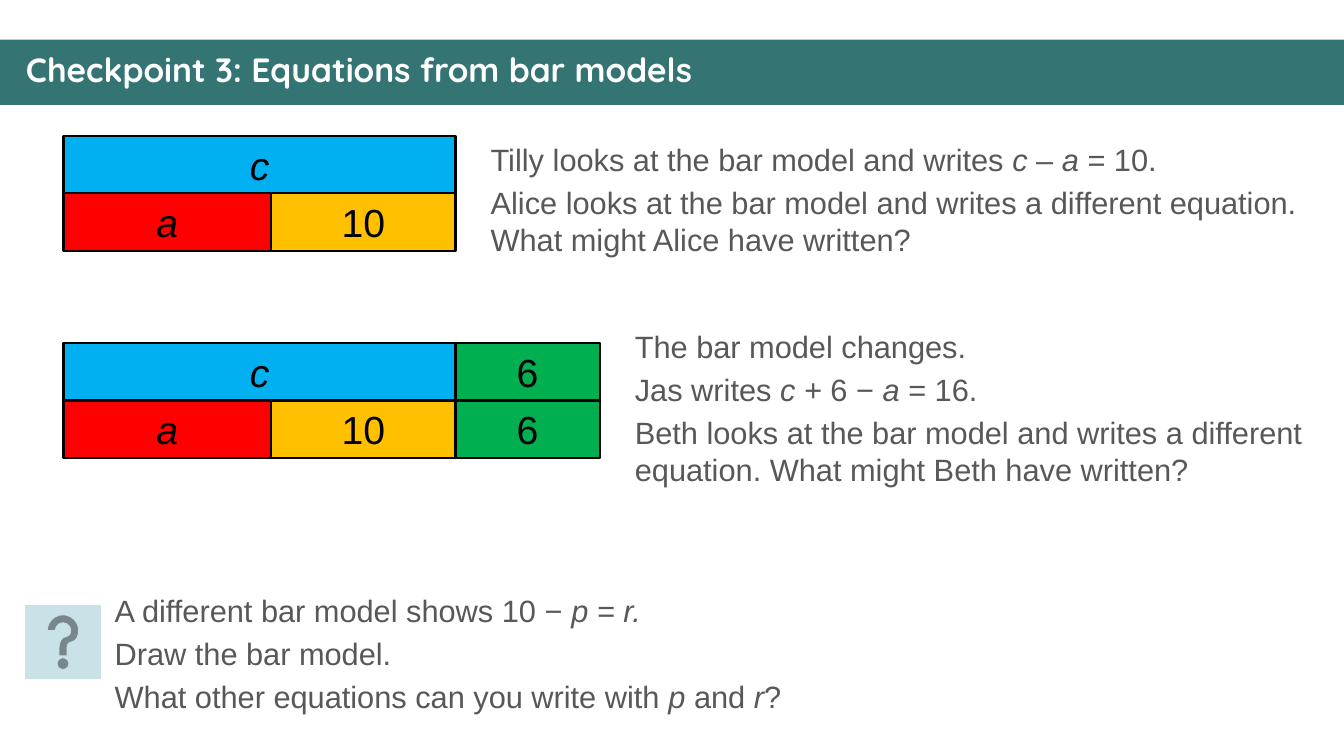
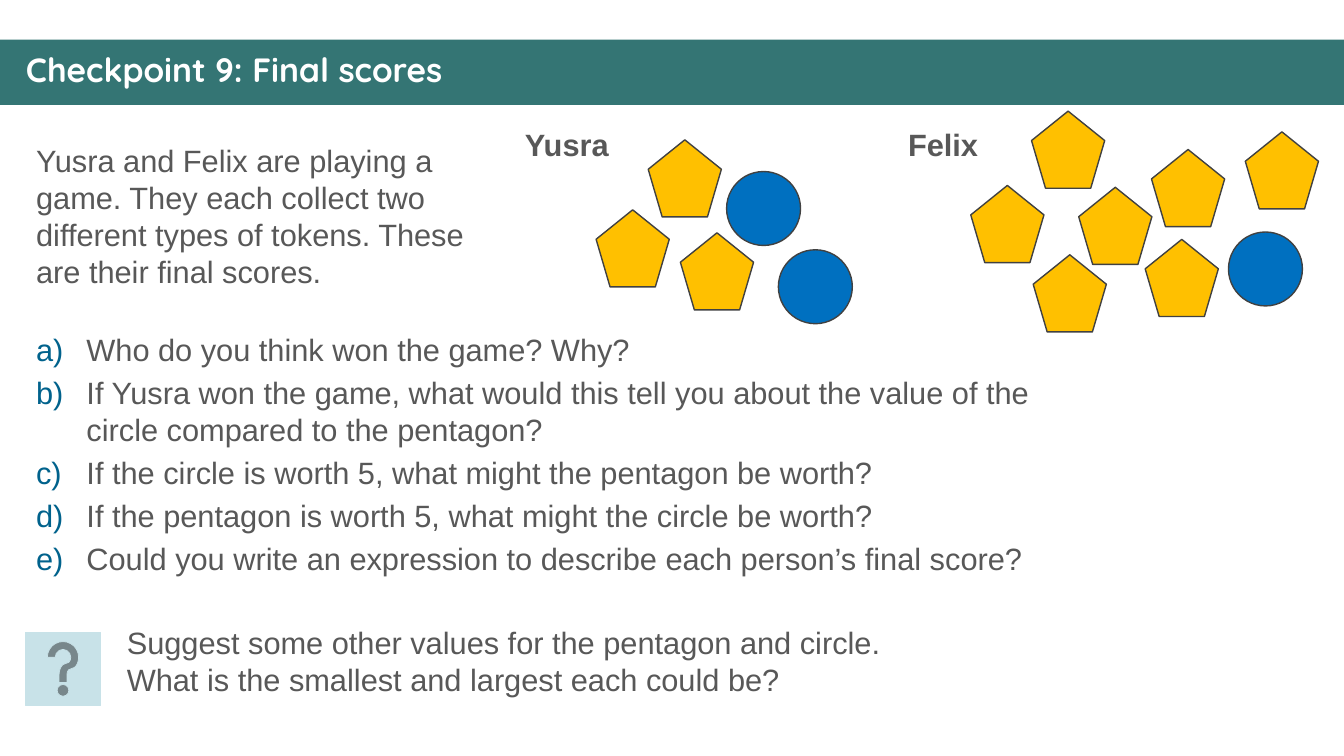
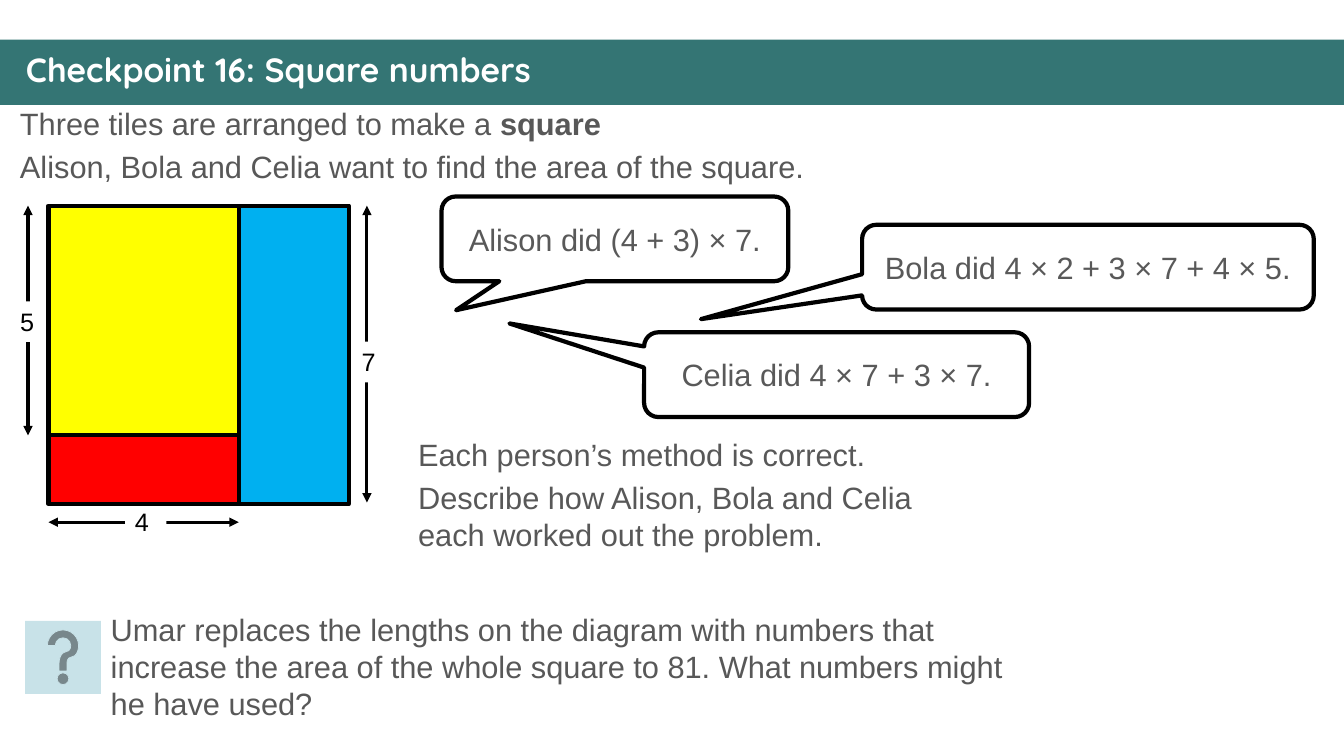
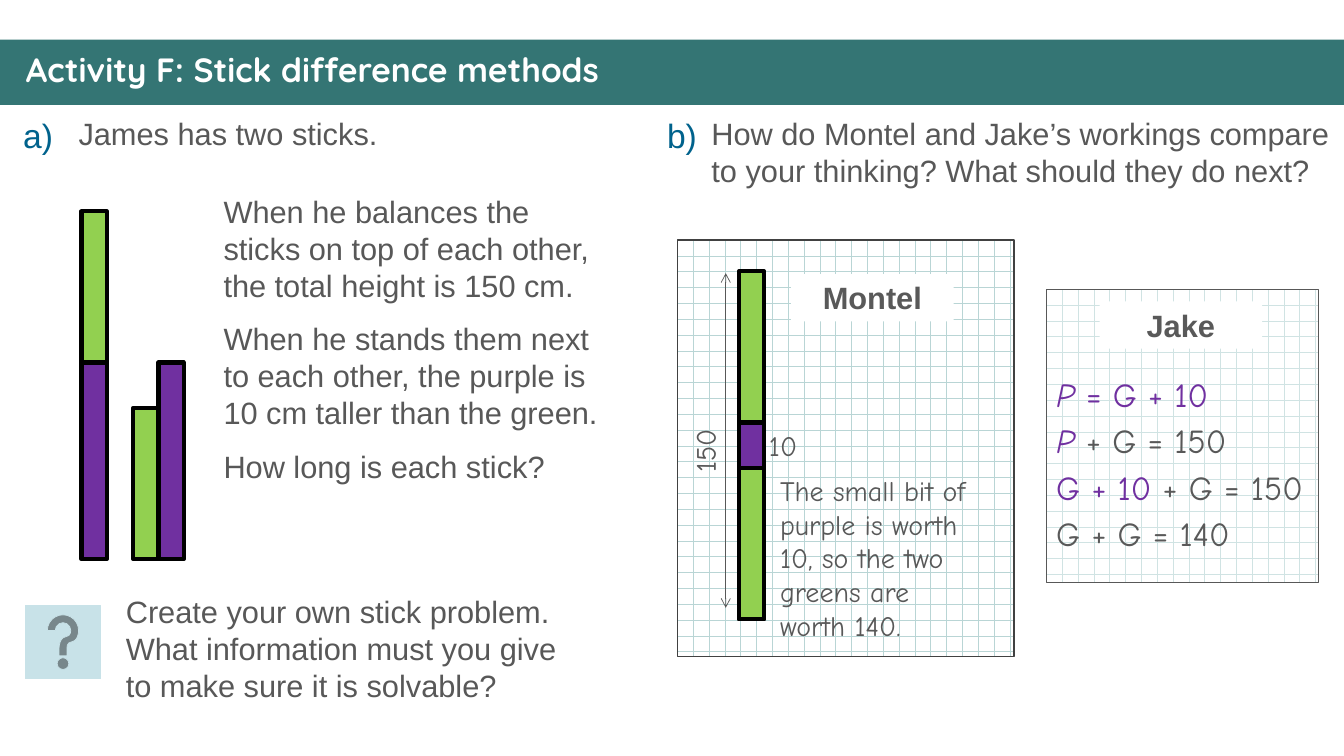
from lxml import etree
from pptx import Presentation
from pptx import util as u
from pptx.dml import color as dml_color
from pptx.enum import dml, shapes as kinds, text
from pptx.oxml import ns

Pt = u.Pt
KIND = kinds.MSO_SHAPE
CENTER = text.PP_ALIGN.CENTER
TOP, MIDDLE = text.MSO_ANCHOR.TOP, text.MSO_ANCHOR.MIDDLE

COLORS = {
    "band": "347574", "help": "C8E2E8", "text": "585858", "callout": "595959",
    "letter": "00628C", "outline": "414141", "black": "000000", "white": "FFFFFF",
    "sky": "00B0F0", "red": "FF0000", "amber": "FFC000", "green": "00B050",
    "yellow": "FFFF00", "counter": "0070C0", "purple": "7030A0", "lime": "92D050",
    "grid": "B9D5D5", "pale grid": "D0E3E3",
}
STICK_WIDTH = 18
STICK_HEIGHTS = {"purple": 140.4, "lime": 108}
TOKENS = {
    "pentagon": (KIND.REGULAR_PENTAGON, 52.3, 55.1, "amber"),
    "circle": (KIND.OVAL, 52.8, 52.8, "counter"),
}


def rgb(name):
    return dml_color.RGBColor.from_string(COLORS[name])


def italic(words):
    return words, {"italic": True}


def write(holder, paragraphs, size=22, color="text", font="Arial", bold=False,
          align=None, gap=4.4, spacing=None, anchor=TOP, lettered=False):
    frame = holder.text_frame
    frame.word_wrap = True
    frame.vertical_anchor = anchor
    for index, runs in enumerate(paragraphs):
        paragraph = frame.paragraphs[0] if index == 0 else frame.add_paragraph()
        paragraph.alignment = align or text.PP_ALIGN.LEFT
        if spacing:
            paragraph.line_spacing = spacing
        if index:
            paragraph.space_before = Pt(gap)
        if lettered:
            add_letter(paragraph)
        for run in [runs] if isinstance(runs, str) else runs:
            words, style = (run, {}) if isinstance(run, str) else run
            part = paragraph.add_run()
            part.text = words
            part.font.name = font
            part.font.size = Pt(size)
            part.font.bold = style.get("bold", bold)
            part.font.italic = style.get("italic", False)
            part.font.color.rgb = rgb(style.get("color", color))


def add_letter(paragraph):
    props = paragraph._p.get_or_add_pPr()
    props.set("marL", str(Pt(36)))
    props.set("indent", str(Pt(-36)))
    tint = etree.SubElement(props, ns.qn("a:buClr"))
    etree.SubElement(tint, ns.qn("a:srgbClr"), val=COLORS["letter"])
    etree.SubElement(props, ns.qn("a:buAutoNum"), type="alphaLcParenR")


def add_text(shapes, x, y, w, h, paragraphs, **style):
    box = shapes.add_textbox(Pt(x), Pt(y), Pt(w), Pt(h))
    write(box, paragraphs, **style)
    return box


def add_block(shapes, x, y, w, h, fill, line=None, weight=1, kind=KIND.RECTANGLE):
    block = shapes.add_shape(kind, Pt(x), Pt(y), Pt(w), Pt(h))
    block.shadow.inherit = False
    block.fill.solid()
    block.fill.fore_color.rgb = rgb(fill)
    if line:
        block.line.color.rgb = rgb(line)
        block.line.width = Pt(weight)
    else:
        block.line.fill.background()
    return block


def add_arrow(shapes, x1, y1, x2, y2, color="black", weight=2.25, tip="triangle"):
    arrow = shapes.add_connector(kinds.MSO_CONNECTOR.STRAIGHT, Pt(x1), Pt(y1), Pt(x2), Pt(y2))
    arrow.line.color.rgb = rgb(color)
    arrow.line.width = Pt(weight)
    outline = arrow.line._get_or_add_ln()
    for end in ("a:headEnd", "a:tailEnd"):
        etree.SubElement(outline, ns.qn(end), type=tip)
    etree.SubElement(arrow._element.spPr, ns.qn("a:effectLst"))


def add_page(deck, title, help_top):
    shapes = deck.slides.add_slide(deck.slide_layouts[6]).shapes
    add_block(shapes, 0, 28.3, 960, 46.7, "band")
    add_text(shapes, 11.5, 34.6, 939, 33.8, [title], size=24, color="white",
             font="Quicksand", bold=True, spacing=0.9)
    add_block(shapes, 18, help_top, 54, 52, "help", "help", 0.5, KIND.ACTION_BUTTON_HELP)
    return shapes


def add_bar_model(shapes, top, extra=None):
    left, height, whole, part = 45.4, 40.9, 280, 148.3
    cells = [
        (0, 0, whole, "sky", italic("c")),
        (0, 1, part, "red", italic("a")),
        (part, 1, whole - part, "amber", "10"),
    ]
    if extra:
        cells += [(whole, row, 103, "green", extra) for row in (0, 1)]
    model = shapes.add_group_shape().shapes
    for offset, row, width, fill, label in cells:
        cell = add_block(model, left + offset, top + row * height, width, height,
                         fill, "black", 1.5)
        write(cell, [[label]], size=28, color="black", align=CENTER, anchor=MIDDLE)


def add_tokens(shapes, name, places):
    kind, width, height, fill = TOKENS[name]
    for x, y in places:
        add_block(shapes, x, y, width, height, fill, "outline", 1, kind)


def add_length(shapes, x, y, w, value):
    label = add_block(shapes, x, y, w, 29, "white")
    write(label, [value], size=18, color="black")


def add_speech(shapes, x, y, w, words, tip):
    bubble = add_block(shapes, x, y, w, 60.5, "white", "black", 3,
                       KIND.ROUNDED_RECTANGULAR_CALLOUT)
    bubble.adjustments[0], bubble.adjustments[1] = tip
    write(bubble, [words], color="callout", align=CENTER, anchor=MIDDLE)


def add_stick(shapes, color, x, bottom):
    height = STICK_HEIGHTS[color]
    add_block(shapes, x, bottom - height, STICK_WIDTH, height, color, "black", 3)


def add_tower(shapes, x, bottom):
    tower = shapes.add_group_shape().shapes
    add_stick(tower, "purple", x, bottom)
    add_stick(tower, "lime", x, bottom - STICK_HEIGHTS["purple"])


def add_squared_paper(shapes, x, y, w, h, ink, line, weight):
    paper = add_block(shapes, x, y, w, h, "white", line, weight)
    paper.fill.patterned()
    paper.fill.pattern = dml.MSO_PATTERN.DOTTED_GRID
    paper.fill.fore_color.rgb = rgb(ink)
    paper.fill.back_color.rgb = rgb("white")


def add_name_label(shapes, x, y, name):
    label = add_block(shapes, x, y, 116, 33.8, "white")
    write(label, [name], color="callout", bold=True, align=CENTER)


def bar_models(deck):
    shapes = add_page(deck, "Checkpoint 3: Equations from bar models", 432.7)
    add_bar_model(shapes, 97.2)
    add_bar_model(shapes, 245.2, extra="6")
    add_text(shapes, 343.4, 97.2, 607, 93, [
        ["Tilly looks at the bar model and writes ", italic("c"), " – ", italic("a"), " = 10."],
        "Alice looks at the bar model and writes a different equation. "
        "What might Alice have written?",
    ])
    add_text(shapes, 446.4, 230.4, 514, 124.6, [
        "The bar model changes.",
        ["Jas writes ", italic("c + "), "6 − ", italic("a"), " = 16."],
        "Beth looks at the bar model and writes a different equation. "
        "What might Beth have written?",
    ])
    add_text(shapes, 74.9, 419, 870, 98, [
        ["A different bar model shows 10 − ", italic("p = r.")],
        "Draw the bar model.",
        ["What other equations can you write with ", italic("p "), "and ", italic("r"), "?"],
    ])


def final_scores(deck):
    shapes = add_page(deck, "Checkpoint 9: Final scores", 451.8)
    add_text(shapes, 18.7, 98, 342, 114, [
        "Yusra and Felix are playing a game. They each collect two different types "
        "of tokens. These are their final scores."])
    add_tokens(shapes, "pentagon", [
        (486, 166.3), (425.8, 149.9), (463, 99.9),
        (693.4, 132.5), (738, 182), (818, 171), (736.8, 79.4),
        (770.5, 133.8), (822.5, 106.8), (889.5, 94.2)])
    add_tokens(shapes, "circle", [(519, 122.5), (556, 178.4), (877.5, 165.7)])
    add_text(shapes, 18.7, 232.6, 751.7, 223, [
        "Who do you think won the game? Why?",
        "If Yusra won the game, what would this tell you about the value of the circle "
        "compared to the pentagon?",
        "If the circle is worth 5, what might the pentagon be worth?",
        "If the pentagon is worth 5, what might the circle be worth?",
        "Could you write an expression to describe each person’s final score?",
    ], lettered=True)
    for x, player in ((367.9, "Yusra"), (641.5, "Felix")):
        add_text(shapes, x, 86.4, 95, 33.8, [player], bold=True)
    add_text(shapes, 83.5, 442, 579.6, 60.5, [
        "Suggest some other values for the pentagon and circle. "
        "What is the smallest and largest each could be?"])


def square_numbers(deck):
    shapes = add_page(deck, "Checkpoint 16: Square numbers", 443.5)
    add_text(shapes, 7.2, 71.3, 947.5, 66, [
        ["Three tiles are arranged to make a ", ("square", {"bold": True})],
        "Alison, Bola and Celia want to find the area of the square.",
    ])

    left, top, split, base, right, bottom = 34.6, 146.9, 170.6, 311, 249.1, 360
    diagram = shapes.add_group_shape().shapes
    add_arrow(diagram, split, 373, left, 373)
    add_arrow(diagram, 20, top, 20, base)
    add_arrow(diagram, 262.1, top, 262.1, bottom - 1)
    add_length(diagram, 89.3, 357.8, 29.5, "4")
    add_length(diagram, 7.2, 215.3, 22.3, "5")
    add_length(diagram, 251.3, 244.1, 29.5, "7")
    for x1, y1, x2, y2, fill in ((left, top, split, base, "yellow"),
                                 (split, top, right, bottom, "sky"),
                                 (left, base, split, bottom, "red")):
        add_block(diagram, x1, y1, x2 - x1, y2 - y1, fill, "black", 3)

    add_speech(shapes, 315.4, 140.4, 247.7, "Alison did (4 + 3) × 7.", (-0.458, 0.843))
    add_speech(shapes, 460.1, 237.4, 275, "Celia did 4 × 7 + 3 × 7.", (-0.85, -0.605))
    add_speech(shapes, 615.8, 160.6, 322.6, "Bola did 4 × 2 + 3 × 7 + 4 × 5.", (-0.857, 0.614))
    add_text(shapes, 291.6, 307.4, 419, 93, [
        "Each person’s method is correct.",
        "Describe how Alison, Bola and Celia each worked out the problem.",
    ])
    add_text(shapes, 72, 432.7, 677.5, 87, [
        "Umar replaces the lengths on the diagram with numbers that increase the area "
        "of the whole square to 81. What numbers might he have used?"])


def stick_methods(deck):
    shapes = add_page(deck, "Activity F: Stick difference methods", 432.7)
    add_text(shapes, 9.4, 78.5, 40, 36, ["a)"], size=24, color="letter")
    add_text(shapes, 49, 78.5, 240, 33.8, ["James has two sticks."])
    floor = 399.4
    add_tower(shapes, 58.2, floor)
    pair = shapes.add_group_shape().shapes
    add_stick(pair, "purple", 113.2, floor)
    add_stick(pair, "lime", 113.2 - STICK_WIDTH, floor)
    add_text(shapes, 152.6, 133.9, 293, 218, [
        "When he balances the sticks on top of each other, the total height is 150 cm.",
        "When he stands them next to each other, the purple is 10 cm taller than the green.",
        "How long is each stick?",
    ], gap=12)
    add_text(shapes, 82.8, 419.8, 342, 87, [
        "Create your own stick problem. What information must you give "
        "to make sure it is solvable?"])

    add_text(shapes, 469.4, 78.5, 40, 36, ["b)"], size=24, color="letter")
    add_text(shapes, 501.1, 78.5, 458.6, 60.5, [
        "How do Montel and Jake’s workings compare to your thinking? "
        "What should they do next?"])

    add_squared_paper(shapes, 483.8, 171.4, 240.5, 297.4, "grid", "outline", 1)
    add_tower(shapes, 527.8, 442.2)
    add_stick(shapes, "lime", 527.8, 442.2)
    handwriting = {"size": 20, "font": "Comic Neue"}
    add_text(shapes, 542.2, 302.4, 50, 31.7, ["10"], **handwriting)
    total = add_text(shapes, 479.5, 304.6, 48.2, 31.7, ["150"], **handwriting)
    total.rotation = 270
    add_arrow(shapes, 518.4, 195.1, 518.4, 434.2, "text", 0.5, "arrow")
    add_text(shapes, 550.1, 334.8, 158.4, 128, [
        "The small bit of purple is worth 10, so the two greens are worth 140."],
        **handwriting)
    add_name_label(shapes, 565.2, 195.8, "Montel")

    add_squared_paper(shapes, 747.4, 206.6, 194.4, 209.5, "pale grid", "text", 0.75)
    add_name_label(shapes, 785.5, 215.3, "Jake")
    add_text(shapes, 747.4, 263.5, 194.4, 141, [
        [("P", {"italic": True, "color": "purple"}), (" = G + 10", {"color": "purple"})],
        [("P", {"italic": True, "color": "purple"}), " + G = 150"],
        [("G + 10 ", {"color": "purple"}), ("+ G = 150", {"color": "callout"})],
        [("G + G = 140", {"color": "callout"})],
    ], size=24, font="Comic Neue")


def main():
    deck = Presentation()
    deck.slide_width, deck.slide_height = Pt(960), Pt(540)
    for build in (bar_models, final_scores, square_numbers, stick_methods):
        build(deck)
    deck.save("out.pptx")


if __name__ == "__main__":
    main()
